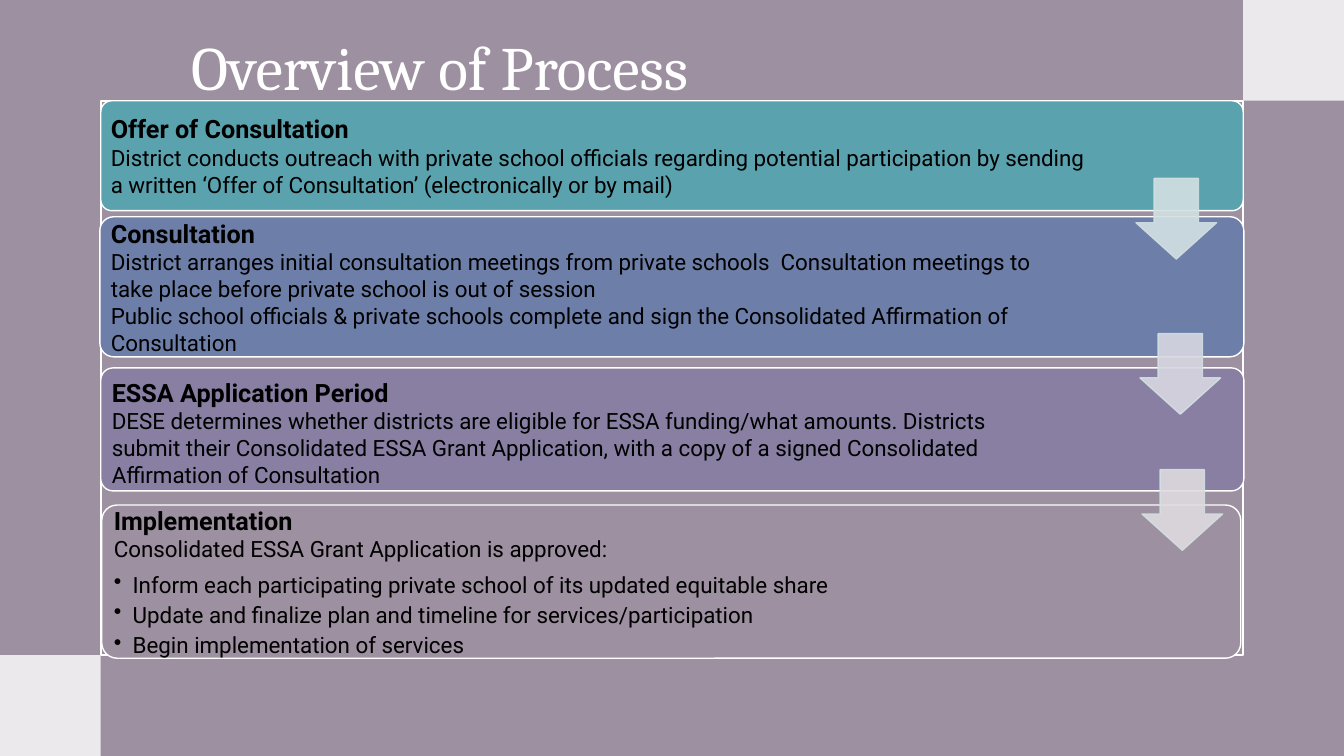
from pptx import Presentation
from pptx.dml.color import RGBColor
from pptx.enum.shapes import MSO_SHAPE
from pptx.enum.text import MSO_ANCHOR, PP_ALIGN
from pptx.oxml.ns import qn
from pptx.util import Pt
from lxml.etree import SubElement


def colour(target, hex_string):
    if hasattr(target, "solid"):
        target.solid()
        target = target.fore_color
    target.rgb = RGBColor.from_string(hex_string)


def add_block(kind, left, top, width, height, fill, line=None, weight=1):
    block = slide.shapes.add_shape(kind, Pt(left), Pt(top), Pt(width), Pt(height))
    block.shadow.inherit = False
    if fill:
        colour(block.fill, fill)
    else:
        block.fill.background()
    if line:
        colour(block.line.fill, line)
        block.line.width = Pt(weight)
    else:
        block.line.fill.background()
    return block


presentation = Presentation()
presentation.slide_width = Pt(960)
presentation.slide_height = Pt(540)
slide = presentation.slides.add_slide(presentation.slide_layouts[5])
colour(slide.background.fill, "9D90A0")

add_block(MSO_SHAPE.RECTANGLE, 72, 72, 816, 396, None, "FFFFFF", 1.5)
for left, top in [(0, 468), (888, 0)]:
    add_block(MSO_SHAPE.RECTANGLE, left, top, 72, 72, "EBE9EC")

title = slide.shapes.title
title.left, title.top, title.width, title.height = Pt(12.24), Pt(0), Pt(486.72), Pt(77.76)
title.text_frame.text = "Overview of Process"
title.text_frame.vertical_anchor = MSO_ANCHOR.BOTTOM
heading = title.text_frame.paragraphs[0]
heading.alignment = PP_ALIGN.RIGHT
heading.line_spacing = 0.9
heading.font.name = "Cambria"
heading.font.size = Pt(44)
colour(heading.font.color, "FFFFFF")

stages = [
    ("Offer of Consultation",
     ["District conducts outreach with private school officials regarding potential participation "
      "by sending a written ‘Offer of Consultation’ (electronically or by mail)"],
     [], "5AA2AE", (72, 72, 816, 78.48), (74.16, 74.16, 713.52, 74.16)),
    ("Consultation",
     ["District arranges initial consultation meetings from private schools  Consultation meetings "
      "to take place before private school is out of session",
      "Public school officials & private schools complete and sign the Consolidated Affirmation "
      "of Consultation"],
     [], "6D7FA8", (71.28, 154.8, 817.2, 100.08), (74.16, 157.68, 685.44, 94.32)),
    ("ESSA Application Period",
     ["DESE determines whether districts are eligible for ESSA funding/what amounts. Districts "
      "submit their Consolidated ESSA Grant Application, with a copy of a signed Consolidated "
      "Affirmation of Consultation"],
     [], "887FA3", (72, 262.8, 816.48, 87.84), (74.88, 267.5, 686.16, 82.8)),
    ("Implementation",
     ["Consolidated ESSA Grant Application is approved:"],
     ["Inform each participating private school of its updated equitable share",
      "Update and finalize plan and timeline for services/participation",
      "Begin implementation of services"],
     "9D90A0", (72.72, 360.72, 813.6, 109.44), (76.32, 363.6, 681.12, 103.68)),
]

for stage, details, steps, fill, panel_box, text_box in stages:
    panel = add_block(MSO_SHAPE.ROUNDED_RECTANGLE, *panel_box, fill, "FFFFFF")
    panel.adjustments[0] = 0.1

    frame = slide.shapes.add_textbox(*map(Pt, text_box)).text_frame
    frame.word_wrap = True
    frame.vertical_anchor = MSO_ANCHOR.MIDDLE
    frame.margin_left = frame.margin_right = Pt(5)
    frame.margin_top = frame.margin_bottom = Pt(5)

    summary = frame.paragraphs[0]
    summary.space_after = Pt(6.4)
    summary.font.name = "Roboto"
    colour(summary.font.color, "000000")
    stage_name = summary.add_run()
    stage_name.text = stage
    stage_name.font.size = Pt(18)
    stage_name.font.bold = True
    for detail in details:
        summary.add_line_break()
        sentence = summary.add_run()
        sentence.text = detail
        sentence.font.size = Pt(16)

    for step in steps:
        item = frame.add_paragraph()
        item.text = step
        item.level = 1
        item.space_after = Pt(2.4)
        item.font.name = "Roboto"
        item.font.size = Pt(16)
        colour(item.font.color, "000000")
        properties = item._p.get_or_add_pPr()
        properties.set("marL", str(Pt(13.5)))
        properties.set("indent", str(-Pt(13.5)))
        bullet = properties.makeelement(qn("a:buChar"), {"char": "•"})
        properties.insert_element_before(bullet, "a:tabLst", "a:defRPr", "a:extLst")

for left, top, fill in [(811.44, 127.44, "D2E0E3"), (814.32, 238.32, "D7D7E1"), (815.76, 335.52, "DFDBDF")]:
    arrow = add_block(MSO_SHAPE.DOWN_ARROW, left, top, 57.6, 57.6, fill, "D2E0E3")
    arrow.adjustments[0] = 0.55
    arrow.adjustments[1] = 0.45
    for tint in arrow._element.spPr.iter(qn("a:srgbClr")):
        SubElement(tint, qn("a:alpha")).set("val", "90000")

presentation.save("out.pptx")
